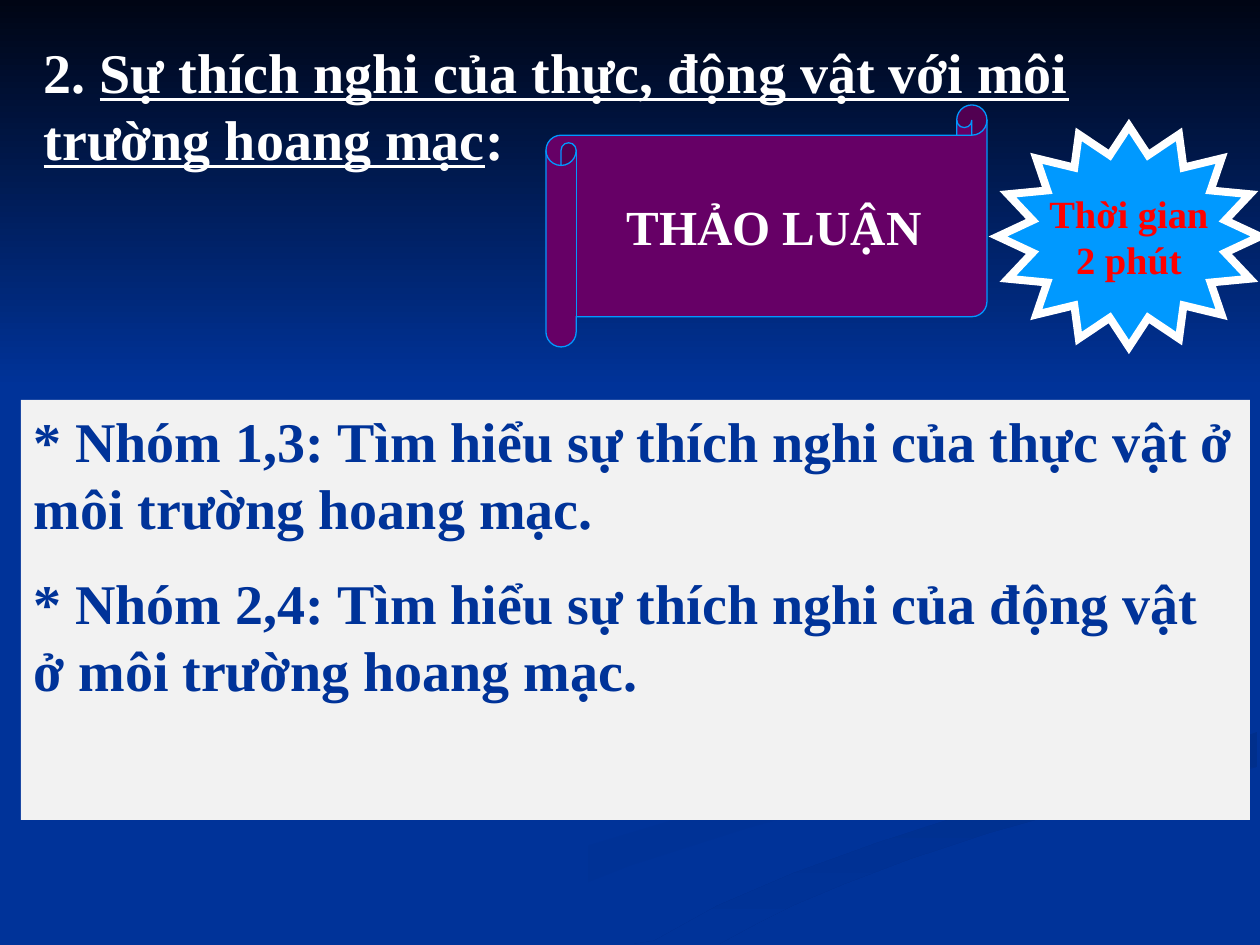
from dataclasses import dataclass

from lxml import etree
from pptx import Presentation
from pptx import util as u
from pptx.dml.color import RGBColor
from pptx.enum import shapes, text
from pptx.oxml.ns import qn

EMU_PER_PX = 914400 / 126
TITLE_ONLY = 5


@dataclass(frozen=True)
class Theme:
    font: str = "Times New Roman"
    body_size: int = 32
    label_size: int = 28
    star_size: int = 22
    paragraph_gap: int = 16
    background: str = "003399"
    night: str = "000514"
    swoosh_low: str = "003193"
    swoosh_high: str = "002F8C"
    white: str = "FFFFFF"
    panel: str = "F2F2F2"
    scroll: str = "660066"
    star: str = "0099FF"
    alert: str = "FF0000"


THEME = Theme()

LOW_SWOOSH = [
    (378, 944), (426, 916), (474, 891), (577, 849), (680, 818), (776, 793),
    (862, 773), (916, 758), (956, 744), (982, 724), (990, 713), (984, 701),
    (946, 683), (901, 665), (795, 636), (738, 616), (718, 595), (724, 578),
    (740, 606), (774, 625), (859, 654), (938, 679), (984, 697), (1008, 732),
    (1001, 752), (983, 763), (932, 780), (852, 799), (748, 828), (629, 866),
    (543, 900), (455, 944),
]
HIGH_SWOOSH = [
    (634, 944), (654, 941), (717, 906), (794, 873), (877, 843), (963, 815),
    (1047, 793), (1138, 769), (1213, 748), (1257, 732), (1257, 767),
    (1196, 781), (1085, 806), (989, 833), (910, 859), (844, 884), (794, 905),
    (756, 924), (719, 944),
]


def px(length):
    return u.Emu(round(length * EMU_PER_PX))


def rgb(color):
    return RGBColor.from_string(color)


def fill_gradient(shape, start, end, angle):
    """Fill with two colours; the angle runs counter-clockwise."""
    shape.shadow.inherit = False
    shape.line.fill.background()
    shape.fill.gradient()
    shape.fill.gradient_angle = angle
    for stop, color in zip(shape.fill.gradient_stops, (start, end)):
        stop.color.rgb = rgb(color)


def add_outline(slide, points, start, end, angle):
    builder = slide.shapes.build_freeform(*points[0], scale=EMU_PER_PX)
    builder.add_line_segments(points[1:], close=True)
    fill_gradient(builder.convert_to_shape(), start, end, angle)


def add_preset(slide, kind, box, fill, line=None, line_width=0):
    shape = slide.shapes.add_shape(kind, *map(px, box))
    shape.shadow.inherit = False
    shape.fill.solid()
    shape.fill.fore_color.rgb = rgb(fill)
    if line:
        shape.line.color.rgb = rgb(line)
        shape.line.width = u.Pt(line_width)
        outline = shape.element.spPr.find(qn("a:ln"))
        etree.SubElement(outline, qn("a:miter"), lim="800000")
    else:
        shape.line.fill.background()
    return shape


def write_text(shape, lines, size, color, align, anchor, wrap=True, gap=0):
    """Write one paragraph per line, with a gap in points between them."""
    frame = shape.text_frame
    frame.text = "\n".join(lines)
    frame.word_wrap = wrap
    frame.auto_size = text.MSO_AUTO_SIZE.NONE
    frame.vertical_anchor = anchor
    for index, paragraph in enumerate(frame.paragraphs):
        paragraph.alignment = align
        paragraph.space_before = u.Pt(gap if index else 0)
        for run in paragraph.runs:
            format_run(run, size, color)


def format_run(run, size, color, underline=False):
    run.font.name = THEME.font
    run.font.size = u.Pt(size)
    run.font.bold = True
    run.font.underline = underline
    run.font.color.rgb = rgb(color)


def add_background(slide):
    slide.background.fill.solid()
    slide.background.fill.fore_color.rgb = rgb(THEME.background)
    add_outline(slide, LOW_SWOOSH, THEME.background, THEME.swoosh_low, 0)
    add_outline(slide, HIGH_SWOOSH, THEME.swoosh_high, THEME.background, 270)
    sky = slide.shapes.add_shape(
        shapes.MSO_SHAPE.RECTANGLE, 0, 0, px(1260), px(388))
    fill_gradient(sky, THEME.night, THEME.background, 270)


def place_title(slide):
    title = slide.shapes.title
    title.left, title.top, title.width, title.height = map(
        px, (31, 31, 1176, 147))
    write_text(title, [""], THEME.body_size, THEME.white,
               text.PP_ALIGN.LEFT, text.MSO_ANCHOR.TOP)
    paragraph = title.text_frame.paragraphs[0]
    parts = [
        ("2. ", False),
        ("Sự thích nghi của thực, động vật với môi trường hoang mạc", True),
        (":", False),
    ]
    for words, underline in parts:
        run = paragraph.add_run()
        run.text = words
        format_run(run, THEME.body_size, THEME.white, underline)
    # Bring the title in front of the sky.
    title.element.getparent().append(title.element)


def add_tasks(slide):
    panel = add_preset(slide, shapes.MSO_SHAPE.RECTANGLE,
                       (21, 400, 1229, 420), THEME.panel)
    tasks = [
        "* Nhóm 1,3: Tìm hiểu sự thích nghi của thực vật ở môi trường hoang mạc.",
        "* Nhóm 2,4: Tìm hiểu sự thích nghi của động vật ở môi trường hoang mạc.",
    ]
    write_text(panel, tasks, THEME.body_size, THEME.background,
               text.PP_ALIGN.LEFT, text.MSO_ANCHOR.TOP,
               gap=THEME.paragraph_gap)


def add_label(slide, kind, box, lines, size, color, **look):
    label = add_preset(slide, kind, box, **look)
    write_text(label, lines, size, color,
               text.PP_ALIGN.CENTER, text.MSO_ANCHOR.MIDDLE, wrap=False)
    return label


def main():
    presentation = Presentation()
    presentation.slide_width = px(1260)
    presentation.slide_height = px(945)
    slide = presentation.slides.add_slide(
        presentation.slide_layouts[TITLE_ONLY])
    add_background(slide)
    add_tasks(slide)
    place_title(slide)
    star = add_label(slide, shapes.MSO_SHAPE.STAR_16_POINT,
                     (998, 126, 262, 221), ["Thời gian", "2 phút"],
                     THEME.star_size, THEME.alert, fill=THEME.star,
                     line=THEME.white, line_width=4.5)
    star.adjustments[0] = 0.375
    add_label(slide, shapes.MSO_SHAPE.HORIZONTAL_SCROLL,
              (546, 105, 441, 242), ["THẢO LUẬN"],
              THEME.label_size, THEME.white, fill=THEME.scroll,
              line=THEME.star, line_width=0.75)
    presentation.save("out.pptx")


if __name__ == "__main__":
    main()
